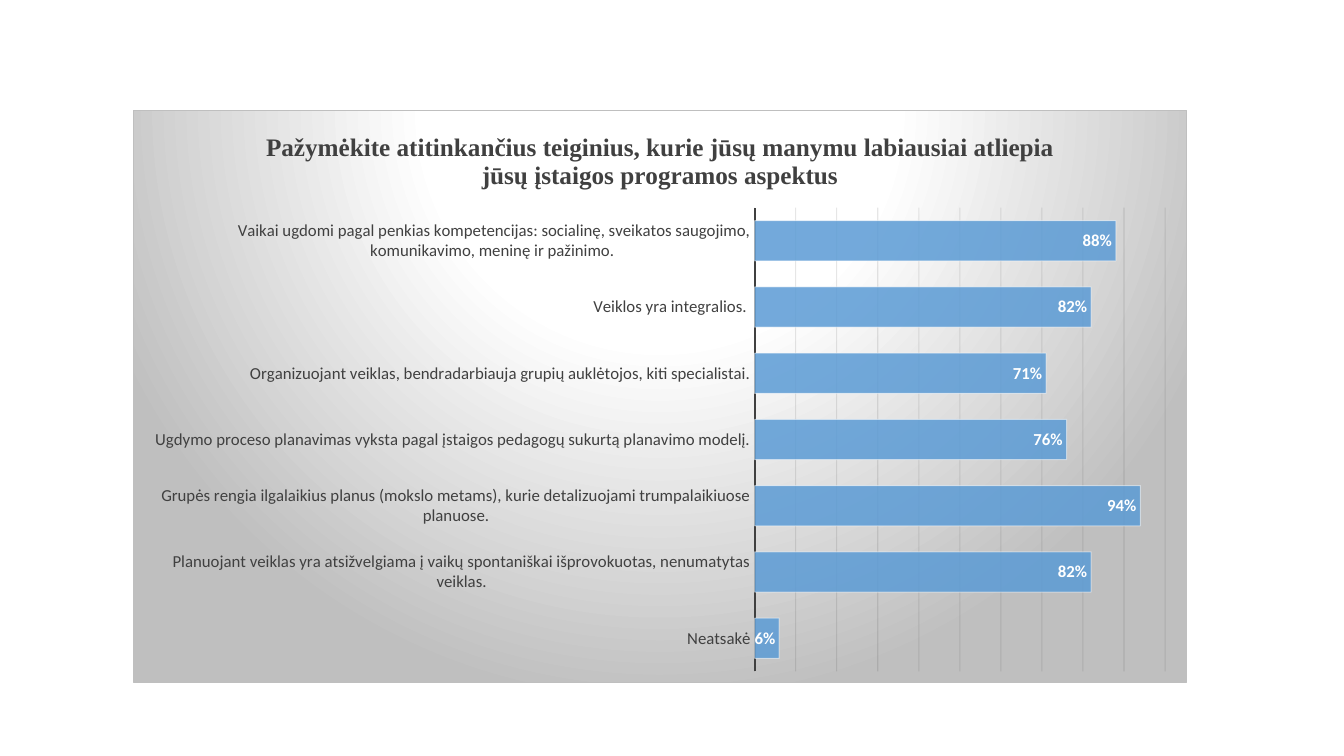
import pptx
import pptx.chart.data
import pptx.dml.color
import pptx.enum.chart
import pptx.oxml
import pptx.oxml.ns
import pptx.util
from lxml import etree

COLORS = {"text": "404040", "bar": "5B9BD5", "white": "FFFFFF",
          "edge": "BFBFBF", "grid": "0D0D0D", "black": "000000"}
TITLE = ("Pažymėkite atitinkančius teiginius, kurie jūsų manymu labiausiai "
         "atliepia jūsų įstaigos programos aspektus")
ANSWERS = [
    ("Neatsakė", 0.06),
    ("Planuojant veiklas yra atsižvelgiama į vaikų spontaniškai "
     "išprovokuotas, nenumatytas veiklas.", 0.82),
    ("Grupės rengia ilgalaikius planus (mokslo metams), kurie "
     "detalizuojami trumpalaikiuose planuose.", 0.94),
    ("Ugdymo proceso planavimas vyksta pagal įstaigos pedagogų sukurtą "
     "planavimo modelį.", 0.76),
    ("Organizuojant veiklas, bendradarbiauja grupių auklėtojos, kiti "
     "specialistai.", 0.71),
    ("Veiklos yra integralios. ", 0.82),
    ("Vaikai ugdomi pagal penkias kompetencijas: socialinę, sveikatos "
     "saugojimo, komunikavimo, meninę ir pažinimo. ", 0.88),
]
NAMESPACES = pptx.oxml.ns.nsdecls("a", "c")


def rgb(name):
    return pptx.dml.color.RGBColor.from_string(COLORS[name])


def set_font(font, size, color, name="Calibri", bold=False):
    font.size = pptx.util.Pt(size)
    font.name = name
    font.bold = bold
    font.color.rgb = rgb(color)


def set_line(line, color, width):
    line.color.rgb = rgb(color)
    line.width = pptx.util.Pt(width)


def find_part(chart, tag):
    """First element with this tag in the chart."""
    return next(chart.element.iter(pptx.oxml.ns.qn(tag)))


def set_opacity(element, percent):
    """Give every colour below an element the same opacity."""
    for color in element.iter(pptx.oxml.ns.qn("a:srgbClr")):
        alpha = etree.SubElement(color, pptx.oxml.ns.qn("a:alpha"))
        alpha.set("val", str(percent * 1000))


def add_background(chart):
    """Radial gradient and thin border behind the whole chart."""
    stops = "".join(
        f'<a:gs pos="{position * 1000}"><a:srgbClr val="{COLORS[name]}"/></a:gs>'
        for position, name in [(0, "white"), (39, "white"), (100, "edge")])
    properties = pptx.oxml.parse_xml(
        f'<c:spPr {NAMESPACES}><a:gradFill><a:gsLst>{stops}</a:gsLst>'
        '<a:path path="circle">'
        '<a:fillToRect l="50000" t="-80000" r="50000" b="180000"/></a:path>'
        f'</a:gradFill><a:ln w="9525"><a:solidFill>'
        f'<a:srgbClr val="{COLORS["edge"]}"/></a:solidFill></a:ln></c:spPr>')
    find_part(chart, "c:chart").addnext(properties)


def place_plot(chart, left, top, width, height):
    """Fix the inner plot area as shares of the chart."""
    shares = "".join(f'<c:{key} val="{value}"/>' for key, value in
                     [("x", left), ("y", top), ("w", width), ("h", height)])
    layout = pptx.oxml.parse_xml(
        f'<c:layout {NAMESPACES}><c:manualLayout><c:layoutTarget val="inner"/>'
        '<c:xMode val="edge"/><c:yMode val="edge"/>'
        f'{shares}</c:manualLayout></c:layout>')
    plot_area = find_part(chart, "c:plotArea")
    for old_layout in plot_area.findall(pptx.oxml.ns.qn("c:layout")):
        plot_area.remove(old_layout)
    plot_area.insert(0, layout)


def style_axes(chart):
    answers = chart.category_axis
    answers.major_tick_mark = pptx.enum.chart.XL_TICK_MARK.NONE
    answers.has_major_gridlines = False
    set_font(answers.tick_labels.font, 12, "text")
    set_line(answers.format.line, "text", 1.5)

    shares = chart.value_axis
    shares.minimum_scale, shares.maximum_scale = 0, 1
    shares.major_unit = 0.1
    shares.has_major_gridlines = True
    set_line(shares.major_gridlines.format.line, "grid", 0.75)
    set_opacity(find_part(chart, "c:majorGridlines"), 10)
    shares.visible = False


def style_bars(chart):
    plot = chart.plots[0]
    plot.gap_width = 65
    plot.vary_by_categories = False
    bars = plot.series[0]
    bars.format.fill.solid()
    bars.format.fill.fore_color.rgb = rgb("bar")
    set_line(bars.format.line, "white", 0.75)
    properties = find_part(chart, "c:ser").find(pptx.oxml.ns.qn("c:spPr"))
    set_opacity(properties.find(pptx.oxml.ns.qn("a:solidFill")), 85)
    set_opacity(properties.find(pptx.oxml.ns.qn("a:ln")), 50)

    labels = bars.data_labels
    labels.show_value = True
    labels.number_format = "0%"
    labels.number_format_is_linked = False
    labels.position = pptx.enum.chart.XL_LABEL_POSITION.INSIDE_END
    set_font(labels.font, 12, "white", bold=True)


def add_survey_chart(slide, left, top, width, height):
    data = pptx.chart.data.CategoryChartData(number_format="0%")
    data.categories = [answer for answer, share in ANSWERS]
    data.add_series("Series 1", [share for answer, share in ANSWERS])
    chart = slide.shapes.add_chart(
        pptx.enum.chart.XL_CHART_TYPE.BAR_CLUSTERED,
        left, top, width, height, data).chart
    set_font(chart.font, 10, "black")
    chart.has_legend = False

    # Title
    chart.has_title = True
    chart.chart_title.include_in_layout = False
    paragraph = chart.chart_title.text_frame.paragraphs[0]
    paragraph.text = TITLE
    set_font(paragraph.font, 18, "text", "Times New Roman", bold=True)

    # Axes, bars and background
    style_axes(chart)
    style_bars(chart)
    place_plot(chart, 0.59, 0.17, 0.39, 0.81)
    add_background(chart)


def main():
    presentation = pptx.Presentation()
    presentation.slide_width = pptx.util.Inches(13.33)
    presentation.slide_height = pptx.util.Inches(7.5)
    slide = presentation.slides.add_slide(presentation.slide_layouts[6])
    add_survey_chart(slide, *map(pptx.util.Inches, (1.32, 1.09, 10.45, 5.69)))
    presentation.save("out.pptx")


if __name__ == "__main__":
    main()
